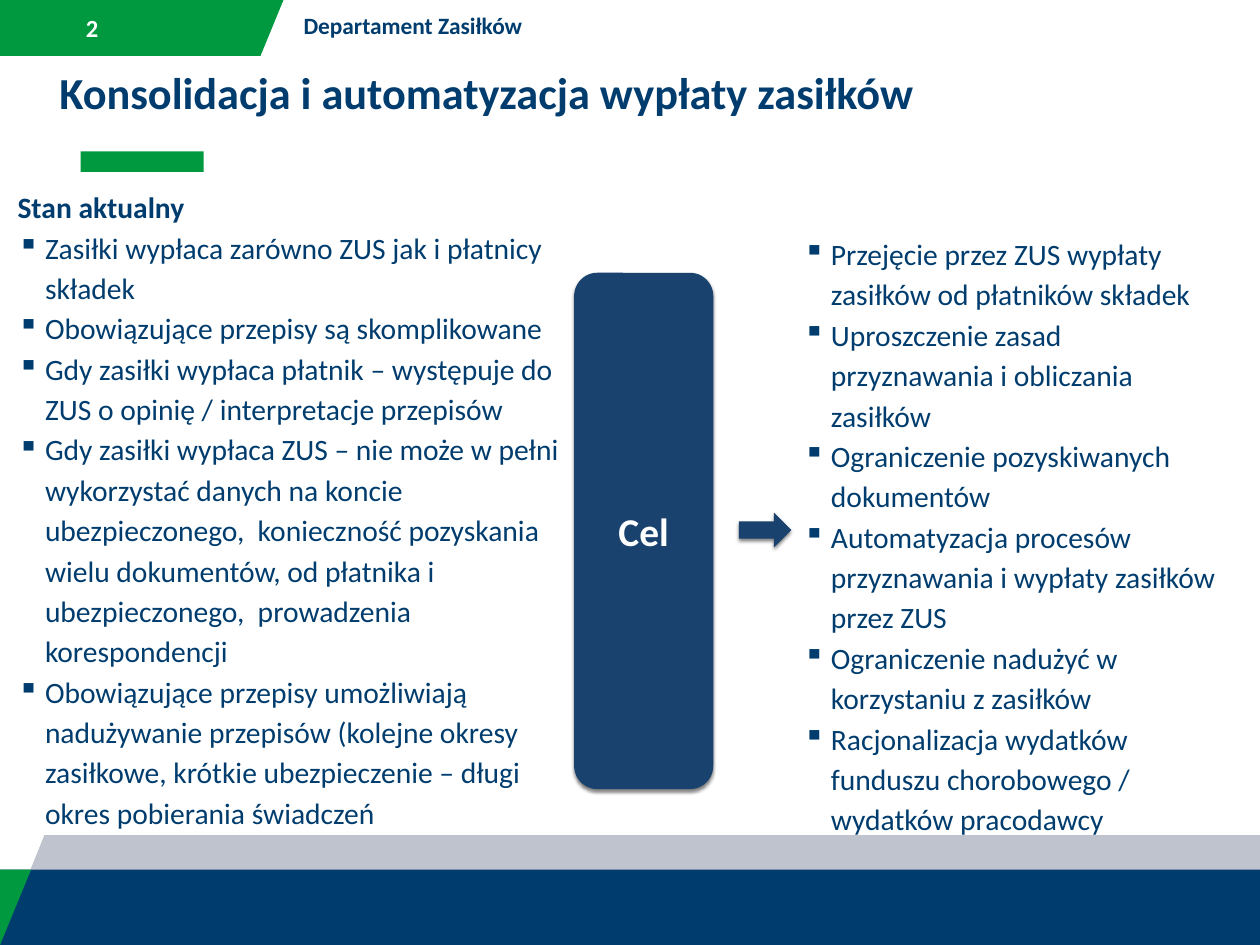
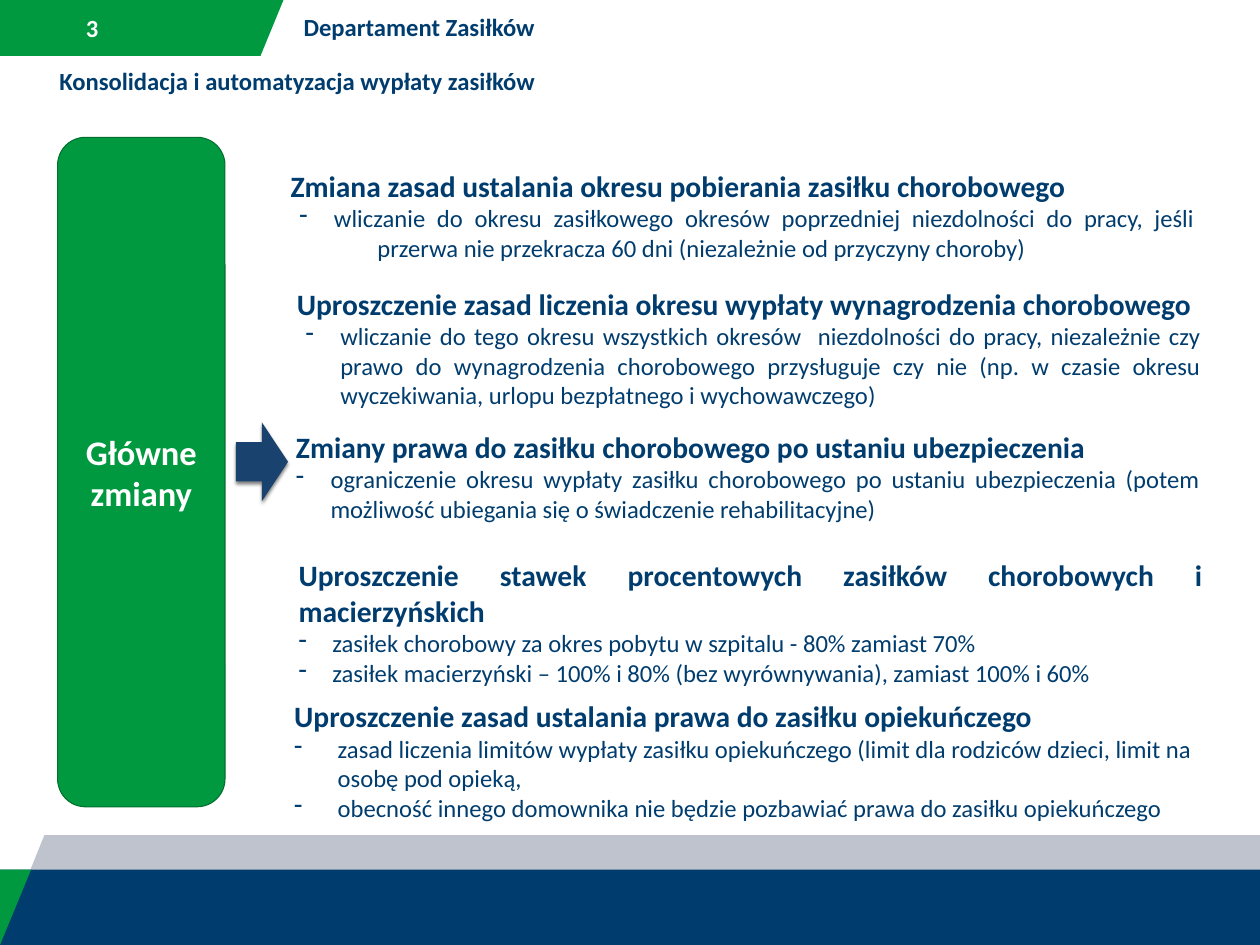
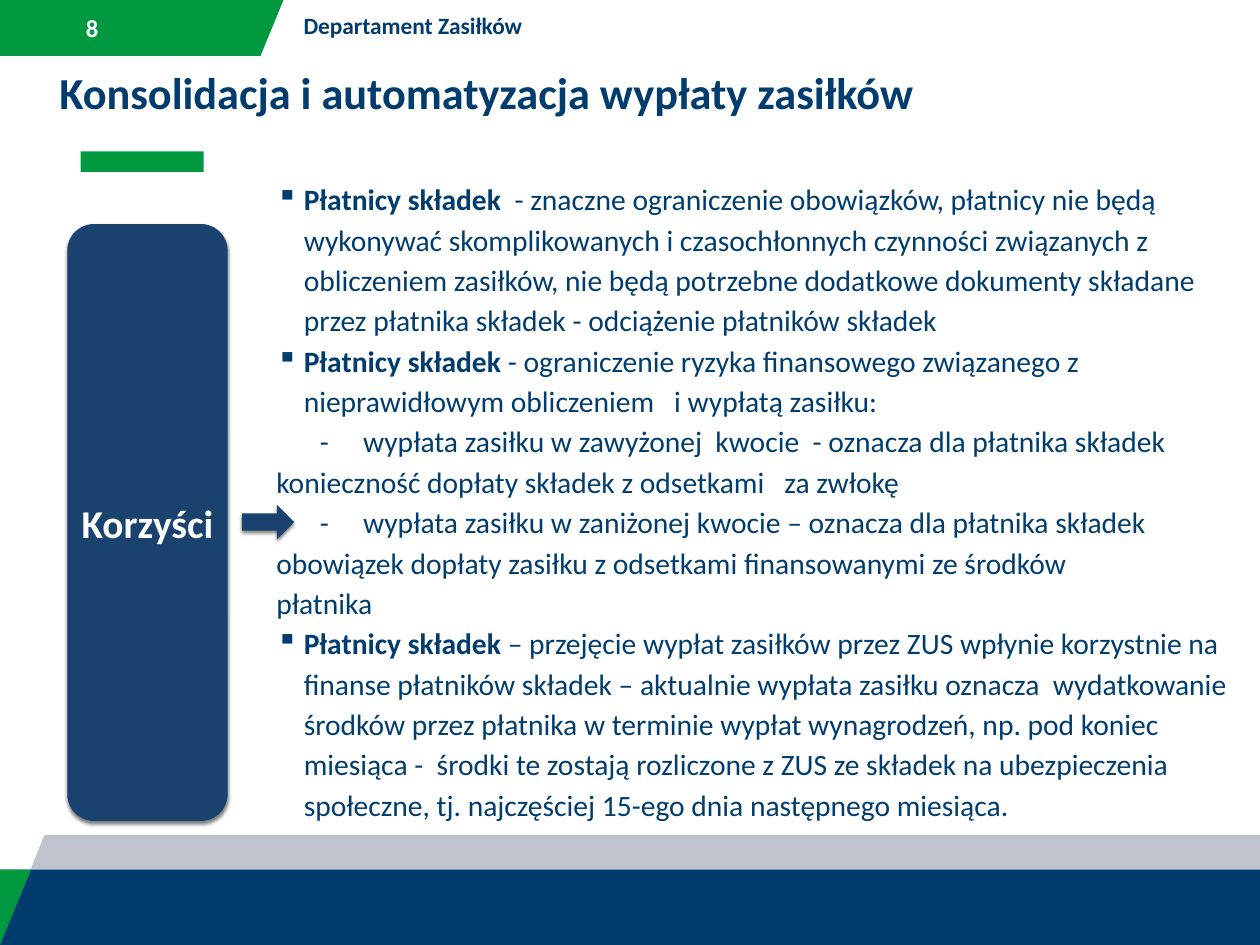
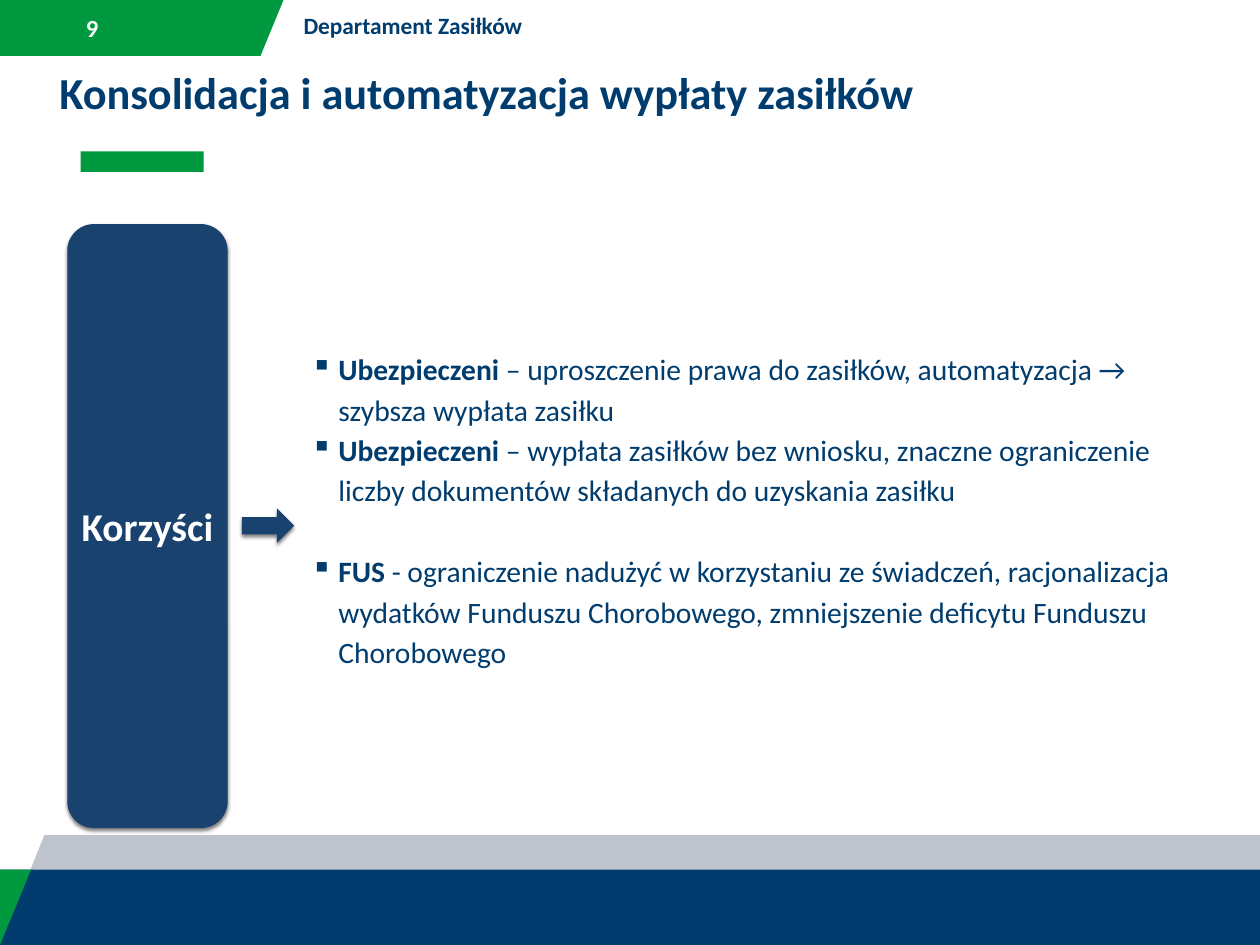
from lxml import etree
from pptx import Presentation
from pptx.dml.color import RGBColor
from pptx.enum.shapes import MSO_SHAPE
from pptx.enum.text import MSO_ANCHOR, MSO_AUTO_SIZE, PP_ALIGN
from pptx.oxml.ns import qn
from pptx.util import Inches, Pt

RECT = MSO_SHAPE.RECTANGLE
ROUNDED = MSO_SHAPE.ROUNDED_RECTANGLE
ARROW = MSO_SHAPE.RIGHT_ARROW
TOP, MIDDLE = MSO_ANCHOR.TOP, MSO_ANCHOR.MIDDLE
LEFT, CENTER, JUSTIFY = PP_ALIGN.LEFT, PP_ALIGN.CENTER, PP_ALIGN.JUSTIFY

COLORS = {
    "green": "00993F",
    "green_edge": "00712F",
    "navy": "003D6E",
    "steel": "1A426F",
    "grey": "BEC3CE",
    "white": "FFFFFF",
    "shadow": "000000",
}
FONT = "Calibri"
WIDE_INSETS, TIGHT_INSETS = (0.1, 0.05), (0.06, 0.06)
LINE_SPACING = 1.14
DEPARTMENT = "Departament Zasiłków"
TITLE = "Konsolidacja i automatyzacja wypłaty zasiłków"


def color(name):
    return RGBColor.from_string(COLORS[name])


def add_child(parent, tag, **attributes):
    child = etree.SubElement(parent, qn(tag))
    for key, value in attributes.items():
        child.set(key, str(value))
    return child


class Deck:
    def __init__(self):
        self.prs = Presentation()
        self.prs.slide_width, self.prs.slide_height = Inches(14.22), Inches(10.67)
        self.layout = self.prs.slide_layouts[5]
        self.slide = None

    def x(self, percent):
        return round(self.prs.slide_width * percent / 100)

    def y(self, percent):
        return round(self.prs.slide_height * percent / 100)

    def box(self, at):
        left, top, width, height = at
        return self.x(left), self.y(top), self.x(width), self.y(height)

    def start(self, number, title_size=36, department_size=19, accent=True):
        first = self.slide is None
        self.slide = self.prs.slides.add_slide(self.layout)
        if first:
            self.draw_bands()
        title = self.slide.shapes.title
        title.left, title.top, title.width, title.height = self.box((4, 6.47, 84.2, 3.9))
        self.frame(title.text_frame)
        self.add_lines(title.text_frame, [TITLE], title_size, bold=True)
        if accent:
            self.shape(RECT, (6.4, 16.03, 9.77, 2.16), "green")
        self.text((6.4, 0.84, 6, 4.2), [str(number)], 20, bold=True,
                  fill="white", anchor=MIDDLE, insets=TIGHT_INSETS)
        self.text((23.4, 0.75, 70.9, 3.9), [DEPARTMENT], department_size, bold=True)

    def draw_bands(self):
        bands = [
            self.outline([(22.5, 0), (20.68, 5.9), (0, 5.9), (0, 0)], "green"),
            self.outline([(0, 100), (3.52, 88.38), (100, 88.38), (100, 100)], "grey"),
            self.shape(RECT, (0, 92.03, 100, 7.97), "navy"),
            self.outline([(0, 92.03), (0, 100), (2.46, 92.03)], "green"),
        ]
        for band in bands:
            self.layout.shapes._spTree.append(band._element)

    def paint(self, shape, fill, edge=None):
        shape.shadow.inherit = False
        shape.fill.solid()
        shape.fill.fore_color.rgb = color(fill)
        if edge:
            shape.line.color.rgb = color(edge)
            shape.line.width = Pt(0.85)
        else:
            shape.line.fill.background()
        return shape

    def outline(self, points, fill):
        start, *rest = [(self.x(px), self.y(py)) for px, py in points]
        builder = self.slide.shapes.build_freeform(*start)
        builder.add_line_segments(rest)
        return self.paint(builder.convert_to_shape(), fill)

    def shape(self, preset, at, fill, edge=None):
        return self.paint(self.slide.shapes.add_shape(preset, *self.box(at)), fill, edge)

    def cast_shadow(self, shape):
        effects = shape._element.spPr.find(qn("a:effectLst"))
        outer = add_child(effects, "a:outerShdw", blurRad=Pt(3), dist=Pt(2),
                          dir=5400000, rotWithShape=0)
        tone = add_child(outer, "a:srgbClr", val=COLORS["shadow"])
        add_child(tone, "a:alpha", val=50000)

    def pillar(self, at, lines, size=32, fill="steel", edge=None):
        pillar = self.shape(ROUNDED, at, fill, edge)
        if edge is None:
            self.cast_shadow(pillar)
        self.frame(pillar.text_frame, MIDDLE, TIGHT_INSETS)
        self.add_lines(pillar.text_frame, lines, size, bold=True, fill="white", align=CENTER)

    def arrow(self, left, top, height=3.66):
        self.cast_shadow(self.shape(ARROW, (left, top, 4.15, height), "steel"))

    def frame(self, frame, anchor=TOP, insets=WIDE_INSETS):
        frame.word_wrap = True
        frame.auto_size = MSO_AUTO_SIZE.NONE
        frame.vertical_anchor = anchor
        frame.margin_left = frame.margin_right = Inches(insets[0])
        frame.margin_top = frame.margin_bottom = Inches(insets[1])

    def text(self, at, lines, size, anchor=TOP, insets=WIDE_INSETS, **style):
        frame = self.slide.shapes.add_textbox(*self.box(at)).text_frame
        self.frame(frame, anchor, insets)
        self.add_lines(frame, lines, size, **style)
        return frame

    def add_lines(self, frame, lines, size, bold=False, fill="navy", align=LEFT,
                  spacing=None, bullet=None, indent=(0.31, -0.31), tabs=(), extend=False):
        for index, line in enumerate(lines):
            fresh = index == 0 and not extend
            paragraph = frame.paragraphs[0] if fresh else frame.add_paragraph()
            lead, body = line if isinstance(line, tuple) else ("", line)
            properties = paragraph._p.get_or_add_pPr()
            if bullet:
                properties.set("marL", str(Inches(indent[0])))
                properties.set("indent", str(Inches(indent[1])))
                tone = add_child(properties, "a:buClr")
                add_child(tone, "a:srgbClr", val=COLORS[fill])
                add_child(properties, "a:buChar", char=bullet)
            if tabs:
                stops = add_child(properties, "a:tabLst")
                for stop in tabs:
                    add_child(stops, "a:tab", pos=Inches(stop), algn="l")
            paragraph.alignment = align
            if spacing:
                paragraph.line_spacing = spacing
            font = paragraph.font
            font.name, font.size, font.bold = FONT, Pt(size), bold
            font.color.rgb = color(fill)
            if lead:
                run = paragraph.add_run()
                run.text, run.font.bold = lead, True
            for part, piece in enumerate(body.split("\v")):
                if part:
                    paragraph.add_line_break()
                paragraph.add_run().text = piece

    def bullets(self, at, lines):
        return self.text(at, lines, 24, spacing=LINE_SPACING, bullet="▪")

    def more_bullets(self, frame, lines):
        self.add_lines(frame, lines, 24, spacing=LINE_SPACING, bullet="▪", extend=True)

    def change(self, left, top, height, heading, details, indent, align=JUSTIFY, tabs=()):
        frame = self.text((left, top, 72.57, height), [heading], 24, bold=True,
                          align=align, anchor=MIDDLE, insets=TIGHT_INSETS)
        self.add_lines(frame, details, 20, align=align, bullet="-", indent=indent,
                       tabs=tabs, extend=True)


def goal_slide(deck):
    deck.start(2)
    deck.bullets((63.08, 24, 34.88, 67.9), [
        "Przejęcie przez ZUS wypłaty zasiłków od płatników składek",
        "Uproszczenie zasad przyznawania i obliczania zasiłków",
        "Ograniczenie pozyskiwanych dokumentów",
        "Automatyzacja procesów przyznawania i wypłaty zasiłków przez ZUS",
        "Ograniczenie nadużyć w korzystaniu z zasiłków",
        "Racjonalizacja wydatków funduszu chorobowego / wydatków pracodawcy",
    ])
    deck.pillar((45.57, 28.87, 11.04, 54.64), ["Cel"])
    deck.arrow(58.65, 54.26)
    current_state = deck.text((0.7, 19.03, 46, 69.9), ["Stan aktualny"], 24,
                              bold=True, spacing=LINE_SPACING)
    deck.more_bullets(current_state, [
        "Zasiłki wypłaca zarówno ZUS jak i płatnicy składek",
        "Obowiązujące przepisy są skomplikowane",
        "Gdy zasiłki wypłaca płatnik – występuje do ZUS o opinię / interpretacje przepisów",
        "Gdy zasiłki wypłaca ZUS – nie może w pełni wykorzystać danych na koncie "
        "ubezpieczonego,  konieczność pozyskania wielu dokumentów, od płatnika i "
        "ubezpieczonego,  prowadzenia korespondencji",
        "Obowiązujące przepisy umożliwiają  nadużywanie przepisów (kolejne okresy "
        "zasiłkowe, krótkie ubezpieczenie – długi okres pobierania świadczeń",
    ])


def changes_slide(deck):
    deck.start(3, title_size=20, department_size=20, accent=False)
    deck.pillar((4.57, 14.53, 13.29, 70.85), ["Główne", "zmiany"], 28, "green", "green_edge")
    deck.arrow(18.71, 44.7, 8.34)
    deck.change(22.64, 17.15, 11.15,
                "Zmiana zasad ustalania okresu pobierania zasiłku chorobowego",
                ["wliczanie do okresu zasiłkowego okresów poprzedniej niezdolności do pracy, "
                 "jeśli\v\tprzerwa nie przekracza 60 dni (niezależnie od przyczyny choroby)"],
                (0.49, -0.39), tabs=(0.98,))
    deck.change(23.14, 29.62, 14.34,
                "Uproszczenie zasad liczenia okresu wypłaty wynagrodzenia chorobowego",
                ["wliczanie do tego okresu wszystkich okresów  niezdolności do pracy, "
                 "niezależnie czy prawo do wynagrodzenia chorobowego przysługuje czy nie "
                 "(np. w czasie okresu wyczekiwania, urlopu bezpłatnego i wychowawczego)"],
                (0.49, -0.39))
    deck.change(23.07, 44.8, 11.15,
                "Zmiany prawa do zasiłku chorobowego po ustaniu ubezpieczenia",
                ["ograniczenie okresu wypłaty zasiłku chorobowego po ustaniu ubezpieczenia "
                 "(potem możliwość ubiegania się o świadczenie rehabilitacyjne)"],
                (0.39, -0.39))
    deck.change(23.28, 58.39, 14.9,
                "Uproszczenie stawek procentowych zasiłków chorobowych i macierzyńskich",
                ["zasiłek chorobowy za okres pobytu w szpitalu - 80% zamiast 70%",
                 "zasiłek macierzyński – 100% i 80% (bez wyrównywania), zamiast 100% i 60%"],
                (0.38, -0.38))
    deck.change(22.93, 73.29, 14.34,
                "Uproszczenie zasad ustalania prawa do zasiłku opiekuńczego",
                ["zasad liczenia limitów wypłaty zasiłku opiekuńczego (limit dla rodziców "
                 "dzieci, limit na osobę pod opieką,",
                 "obecność innego domownika nie będzie pozbawiać prawa do zasiłku opiekuńczego"],
                (0.49, -0.49), align=LEFT)


def payer_benefits_slide(deck):
    deck.start(8)
    deck.pillar((5.34, 23.71, 12.73, 63.17), ["Korzyści"])
    benefits = deck.bullets((21.24, 18.18, 76.93, 69.07), [
        ("Płatnicy składek  ",
         "- znaczne ograniczenie obowiązków, płatnicy nie będą wykonywać skomplikowanych "
         "i czasochłonnych czynności związanych z obliczeniem zasiłków, nie będą potrzebne "
         "dodatkowe dokumenty składane przez płatnika składek - odciążenie płatników składek"),
        ("Płatnicy składek ",
         "- ograniczenie ryzyka finansowego związanego z nieprawidłowym obliczeniem   "
         "i wypłatą zasiłku:"),
    ])
    deck.add_lines(benefits, [
        "\t-\twypłata zasiłku w zawyżonej  kwocie  - oznacza dla płatnika składek "
        "konieczność dopłaty składek z odsetkami   za zwłokę",
        "\t-\twypłata zasiłku w zaniżonej kwocie – oznacza dla płatnika składek "
        "obowiązek dopłaty zasiłku z odsetkami finansowanymi ze środków\vpłatnika",
    ], 24, spacing=LINE_SPACING, tabs=(0.49, 0.98), extend=True)
    deck.more_bullets(benefits, [
        ("Płatnicy składek ",
         "– przejęcie wypłat zasiłków przez ZUS wpłynie korzystnie na finanse płatników "
         "składek – aktualnie wypłata zasiłku oznacza  wydatkowanie środków przez płatnika "
         "w terminie wypłat wynagrodzeń, np. pod koniec miesiąca -  środki te zostają "
         "rozliczone z ZUS ze składek na ubezpieczenia społeczne, tj. najczęściej 15-ego "
         "dnia następnego miesiąca."),
    ])
    deck.arrow(19.2, 53.42)


def insured_benefits_slide(deck):
    deck.start(9)
    deck.pillar((5.34, 23.71, 12.73, 63.92), ["Korzyści"])
    benefits = deck.bullets((23.98, 36.18, 72.29, 37), [
        ("Ubezpieczeni ",
         "– uproszczenie prawa do zasiłków, automatyzacja → szybsza wypłata zasiłku"),
        ("Ubezpieczeni ",
         "– wypłata zasiłków bez wniosku, znaczne ograniczenie liczby dokumentów "
         "składanych do uzyskania zasiłku"),
        ("FUS ",
         "- ograniczenie nadużyć w korzystaniu ze świadczeń, racjonalizacja wydatków "
         "Funduszu Chorobowego, zmniejszenie deficytu Funduszu Chorobowego"),
    ])
    benefits.paragraphs[-1].space_before = Pt(33)
    deck.arrow(19.2, 53.8)


def main():
    deck = Deck()
    goal_slide(deck)
    changes_slide(deck)
    payer_benefits_slide(deck)
    insured_benefits_slide(deck)
    deck.prs.save("out.pptx")


if __name__ == "__main__":
    main()
